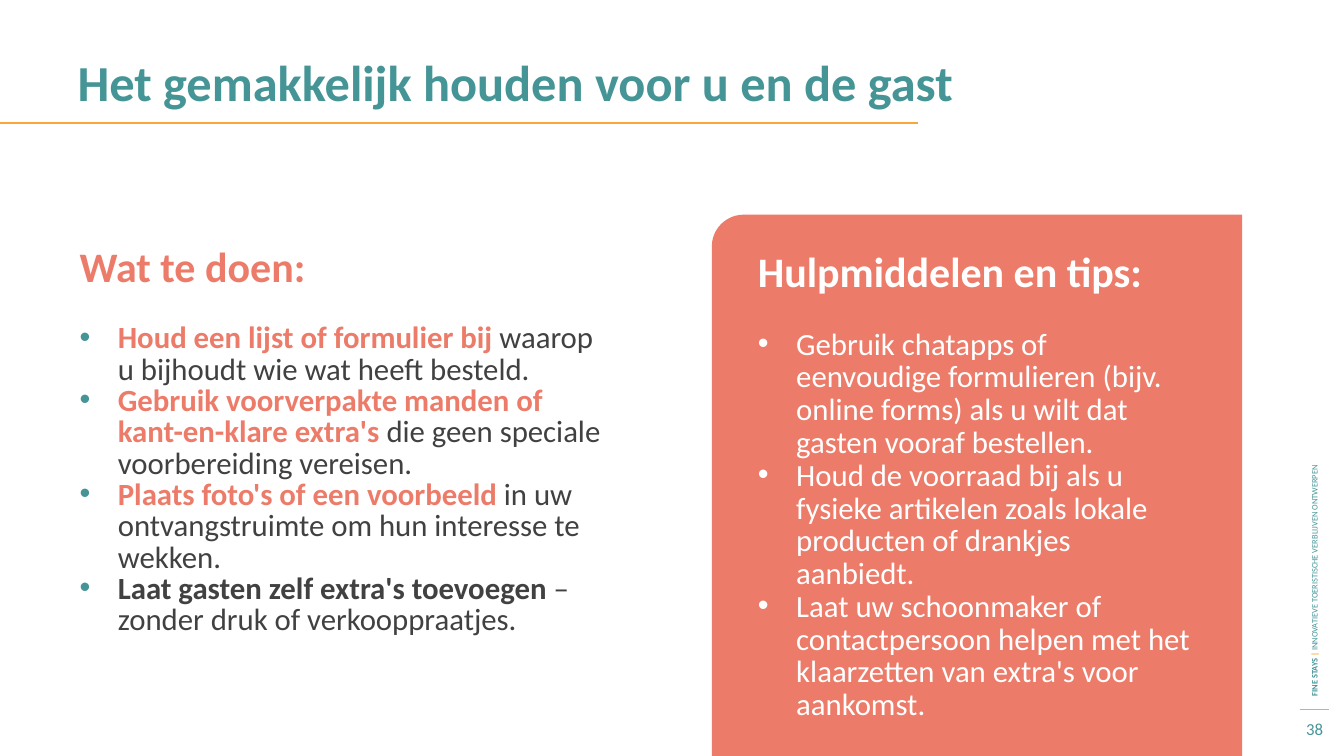
"""Build the slide on keeping extras easy for host and guest."""
from lxml.etree import SubElement as Sub
from pptx import Presentation
from pptx.dml.color import RGBColor
from pptx.enum.shapes import MSO_CONNECTOR as Link, MSO_SHAPE as Form
from pptx.enum.text import MSO_ANCHOR as Anchor, PP_ALIGN as Align
from pptx.oxml.ns import qn
from pptx.util import Inches, Pt

TEAL = RGBColor(0x45, 0x95, 0x97)
GOLD = RGBColor(0xFB, 0xA6, 0x3B)
CORAL = RGBColor(0xEC, 0x7C, 0x69)
GREY = RGBColor(0x41, 0x41, 0x41)
WHITE = RGBColor(0xFF, 0xFF, 0xFF)
FONT = "Calibri"
WIDE, HIGH = Inches(13.33), Inches(7.5)
DENT = Inches(0.38)

TODO = [
    ("Houd een lijst of formulier bij ", CORAL,
     "waarop u bijhoudt wie wat heeft besteld."),
    ("Gebruik voorverpakte manden of kant-en-klare extra's ", CORAL,
     "die geen speciale voorbereiding vereisen."),
    ("Plaats foto's of een voorbeeld ", CORAL,
     "in uw ontvangstruimte om hun interesse te wekken."),
    ("Laat gasten zelf extra's toevoegen ", GREY,
     "– zonder druk of verkooppraatjes."),
]
TIPS = [
    "Gebruik chatapps of eenvoudige formulieren (bijv. online forms) "
    "als u wilt dat gasten vooraf bestellen.",
    "Houd de voorraad bij als u fysieke artikelen zoals lokale producten "
    "of drankjes aanbiedt.",
    "Laat uw schoonmaker of contactpersoon helpen met het klaarzetten "
    "van extra's voor aankomst.",
]


def area(left, top, width, height):
    """Turn percentages of the slide into lengths."""
    return (int(WIDE * left / 100), int(HIGH * top / 100),
            int(WIDE * width / 100), int(HIGH * height / 100))


def rule(slide, start, end, row, weight):
    """Draw a level gold line."""
    line = slide.shapes.add_connector(Link.STRAIGHT, *area(start, row, end, row))
    line.line.color.rgb = GOLD
    line.line.width = Pt(weight)
    Sub(line._element.spPr, qn("a:effectLst"))


def bullet(para, color):
    """Give a paragraph a hanging round bullet."""
    props = para._p.get_or_add_pPr()
    props.set("marL", str(DENT))
    props.set("indent", str(-DENT))
    Sub(Sub(props, qn("a:buClr")), qn("a:srgbClr"), val=str(color))
    Sub(props, qn("a:buFont"), typeface="Arial")
    Sub(props, qn("a:buChar"), char="•")


def write(para, parts, size, lead=None, dot=None):
    """Fill a paragraph with runs of text, colour and weight."""
    if dot is not None:
        bullet(para, dot)
    if lead:
        para.line_spacing = Pt(lead)
    for text, color, bold in parts:
        run = para.add_run()
        run.text = text
        font = run.font
        font.name, font.size, font.bold = FONT, Pt(size), bold
        font.color.rgb = color


def block(slide, place, parts, size, lead=None, dot=None):
    """Add a wrapped text box and write its first paragraph."""
    box = slide.shapes.add_textbox(*area(*place))
    frame = box.text_frame
    frame.word_wrap = True
    write(frame.paragraphs[0], parts, size, lead, dot)
    return box


def card(slide):
    """Draw the coral panel with its round top left corner."""
    panel = slide.shapes.add_shape(
        Form.ROUND_1_RECTANGLE, *area(52.55, 29.13, 40.29, 70.13))
    panel.rotation = 270
    panel.adjustments[0] = 0.06
    panel.shadow.inherit = False
    panel.fill.solid()
    panel.fill.fore_color.rgb = CORAL
    panel.line.fill.background()


def margin(slide):
    """Add the upright footer, its line and the page number."""
    rule(slide, 96.7, 98.87, 93.87, 0.75)
    side = block(slide, (76.14, 53.6, 43.29, 2.67), [
        ("FINE STAYS ", TEAL, True), ("| ", GOLD, True),
        ("INNOVATIEVE TOERISTISCHE VERBLIJVEN ONTWERPEN", TEAL, False)], 6)
    side.rotation = 270
    page = block(slide, (95.87, 94.13, 3.9, 4.53), [("38", TEAL, False)], 12)
    page.text_frame.paragraphs[0].alignment = Align.CENTER
    for box in (side, page):
        box.text_frame.vertical_anchor = Anchor.MIDDLE


def todo(slide):
    """Add the left column with its heading and list."""
    block(slide, (5.18, 32.4, 46.06, 11.73),
          [("Wat te doen:", CORAL, True)], 30, 29)
    rows = [[(head, color, True), (rest, GREY, False)]
            for head, color, rest in TODO]
    box = block(slide, (5.18, 42.13, 40.59, 53.33), rows[0], 22, 22.4, TEAL)
    for row in rows[1:]:
        write(box.text_frame.add_paragraph(), row, 22, 22.4, TEAL)


def tips(slide):
    """Add the panel with its heading and list."""
    card(slide)
    box = block(slide, (55.66, 34.13, 34.06, 47.87),
                [("Hulpmiddelen en tips:", WHITE, True)], 30, 23.4)
    frame = box.text_frame
    frame.paragraphs[0].space_after = Pt(23.4)
    for tip in TIPS:
        write(frame.add_paragraph(), [(tip, WHITE, False)], 22, 23.4, WHITE)


def main():
    """Build and save the slide."""
    deck = Presentation()
    deck.slide_width, deck.slide_height = WIDE, HIGH
    slide = deck.slides.add_slide(deck.slide_layouts[6])
    margin(slide)
    block(slide, (5.03, 7.2, 90.02, 11.73),
          [("Het gemakkelijk houden voor u en de gast", TEAL, True)], 36, 37.2)
    rule(slide, 0, 68.34, 16.27, 1.5)
    todo(slide)
    tips(slide)
    deck.save("out.pptx")


if __name__ == "__main__":
    main()
